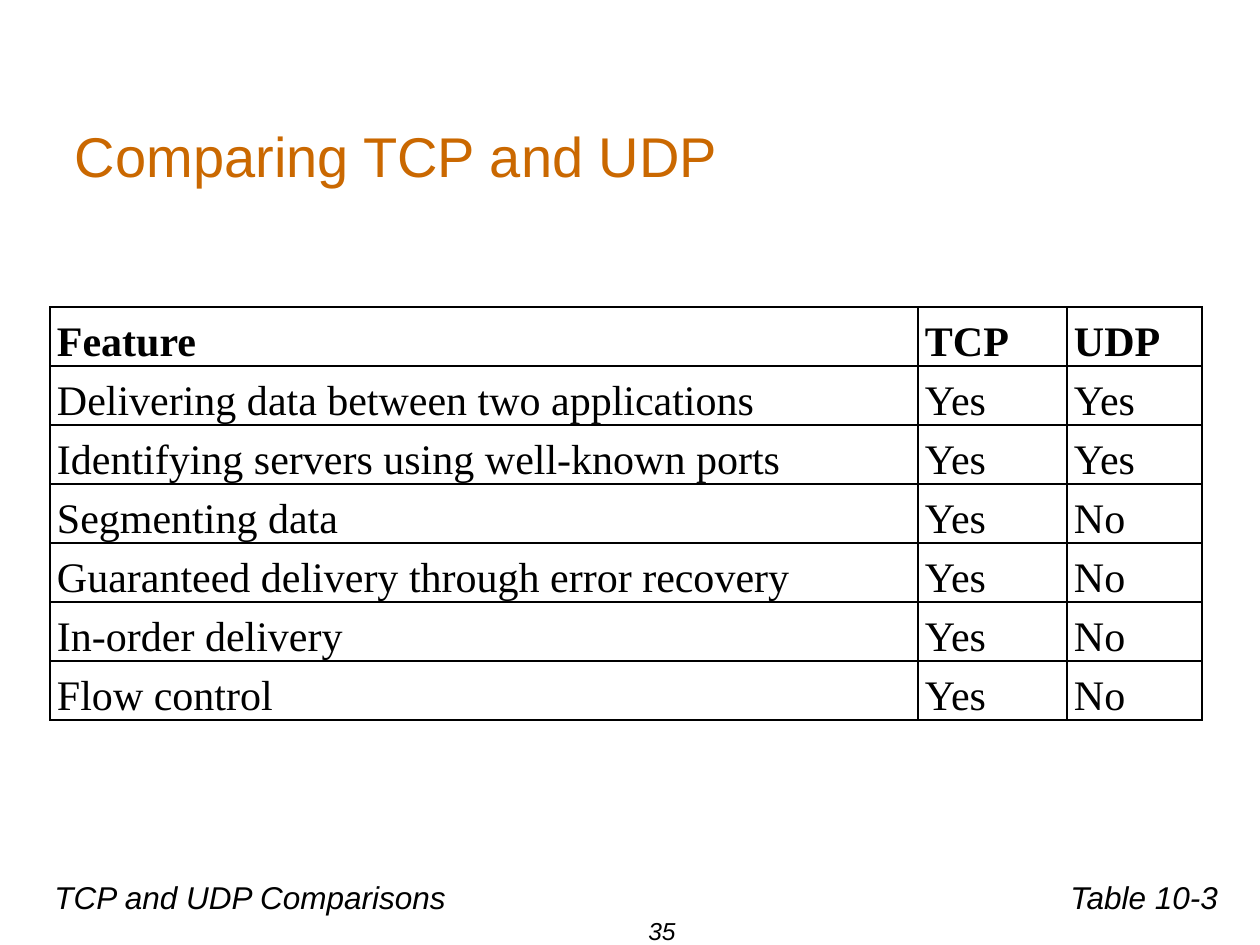
from lxml.etree import SubElement
from pptx import Presentation
from pptx.dml.color import RGBColor
from pptx.enum.text import MSO_ANCHOR as Anchor, PP_ALIGN as Align
from pptx.oxml.ns import qn
from pptx.util import Emu, Pt

BLACK = RGBColor(0x00, 0x00, 0x00)
ORANGE = RGBColor(0xCA, 0x68, 0x00)
WHITE = RGBColor(0xFF, 0xFF, 0xFF)


def px(length):
    return Emu(round(length * 914400 / 126))


def write(frame, text, size=18, font="Arial", color=BLACK, bold=False,
          italic=False, align=Align.LEFT, spacing=None):
    paragraph = frame.paragraphs[0]
    paragraph.alignment = align
    paragraph.line_spacing = spacing
    run = paragraph.add_run()
    run.text = text
    run.font.size = Pt(size)
    run.font.name = font
    run.font.color.rgb = color
    run.font.bold = bold
    run.font.italic = italic


presentation = Presentation()
presentation.slide_width = px(1260)
presentation.slide_height = px(945)
slide = presentation.slides.add_slide(presentation.slide_layouts[6])
slide.background.fill.solid()
slide.background.fill.fore_color.rgb = WHITE

text_boxes = [
    ("Comparing TCP and UDP", (63, 116, 1134, 79), Anchor.MIDDLE, True,
     dict(size=32, color=ORANGE)),
    ("Table 10-3", (1058, 872, 174, 50), Anchor.TOP, False, dict(italic=True)),
    ("TCP and UDP Comparisons", (42, 872, 1155, 50), Anchor.TOP, True,
     dict(italic=True)),
    ("35", (462, 879, 400, 66), Anchor.BOTTOM, True,
     dict(size=14, italic=True, align=Align.CENTER)),
]
for text, box, anchor, wrap, style in text_boxes:
    frame = slide.shapes.add_textbox(*map(px, box)).text_frame
    frame.word_wrap = wrap
    frame.vertical_anchor = anchor
    if anchor == Anchor.BOTTOM:
        frame.margin_bottom = 0
    elif anchor == Anchor.MIDDLE:
        frame.margin_left = px(12)
    write(frame, text, **style)

rows = [
    ("Feature", "TCP", "UDP"),
    ("Delivering data between two applications", "Yes", "Yes"),
    ("Identifying servers using well-known ports", "Yes", "Yes"),
    ("Segmenting data", "Yes", "No"),
    ("Guaranteed delivery through error recovery", "Yes", "No"),
    ("In-order delivery", "Yes", "No"),
    ("Flow control", "Yes", "No"),
]
column_widths = [868, 149, 135]
row_height = 59
table = slide.shapes.add_table(
    len(rows), len(column_widths), px(50), px(307),
    px(sum(column_widths)), px(row_height * len(rows))).table
for column, width in zip(table.columns, column_widths):
    column.width = px(width)

for row_index, row in enumerate(rows):
    table.rows[row_index].height = px(row_height)
    for column_index, text in enumerate(row):
        cell = table.cell(row_index, column_index)
        cell.vertical_anchor = Anchor.BOTTOM
        cell.margin_left = cell.margin_right = px(7)
        cell.margin_top = px(1)
        cell.margin_bottom = 0
        write(cell.text_frame, text, size=24, font="Times New Roman",
              bold=row_index == 0, spacing=1.15)
        properties = cell._tc.get_or_add_tcPr()
        for side in ("a:lnL", "a:lnR", "a:lnT", "a:lnB"):
            border = SubElement(properties, qn(side), w=str(Pt(1)))
            border_fill = SubElement(border, qn("a:solidFill"))
            SubElement(border_fill, qn("a:srgbClr"), val=str(BLACK))
        cell.fill.solid()
        cell.fill.fore_color.rgb = WHITE

presentation.save("out.pptx")
